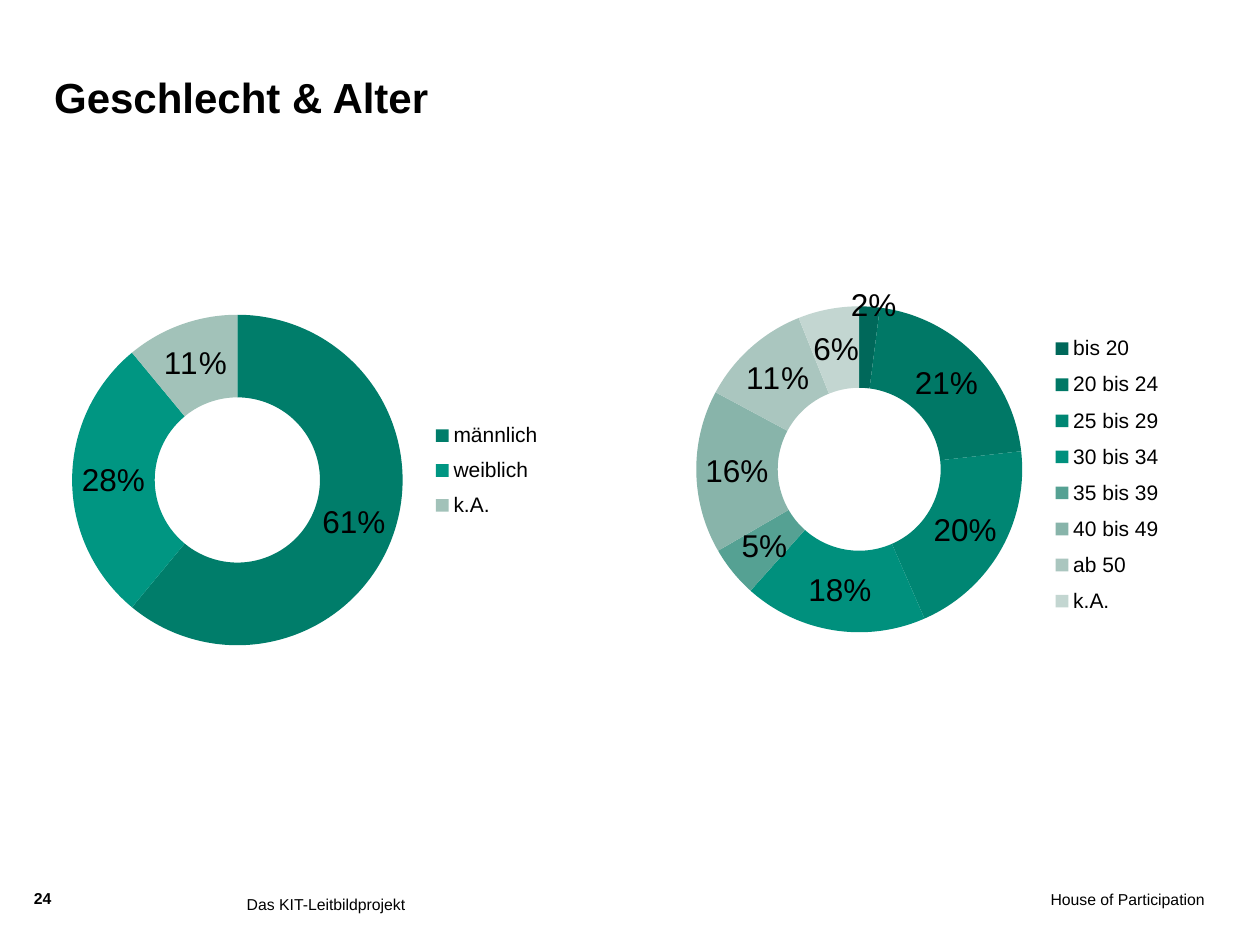
from lxml import etree
from pptx import Presentation
from pptx.chart.data import CategoryChartData
from pptx.dml.color import RGBColor
from pptx.enum.chart import XL_CHART_TYPE, XL_LEGEND_POSITION
from pptx.enum.text import MSO_ANCHOR, PP_ALIGN
from pptx.oxml import parse_xml
from pptx.oxml.ns import nsdecls, qn
from pptx.util import Inches, Pt

DOUGHNUT = XL_CHART_TYPE.DOUGHNUT
LEGEND_RIGHT = XL_LEGEND_POSITION.RIGHT
TOP, BOTTOM = MSO_ANCHOR.TOP, MSO_ANCHOR.BOTTOM
LEFT, RIGHT = PP_ALIGN.LEFT, PP_ALIGN.RIGHT

THEME = {
    "font": "Arial",
    "text": RGBColor.from_string("000000"),
    "title": Pt(24),
    "label": Pt(18),
    "legend": Pt(12),
    "footer": Pt(9),
    "gender": ["007D6A", "009682", "A2C2B9"],
    "age": ["00685A", "007866", "008673", "00907D",
            "55A193", "88B4AA", "AAC6BF", "C3D6D1"],
}

deck = Presentation()
deck.slide_width, deck.slide_height = Inches(10), Inches(7.5)
page = deck.slides.add_slide(deck.slide_layouts[6])
column, row = deck.slide_width / 100, deck.slide_height / 100


def style(font, size, bold=False):
    for name, value in {"name": THEME["font"], "size": size, "bold": bold}.items():
        setattr(font, name, value)
    font.color.rgb = THEME["text"]


def add_layout(parent, index, values, inner=False):
    """Insert a manual chart layout; values are shares of the chart's size."""
    layout = parse_xml(f"<c:layout {nsdecls('c')}><c:manualLayout/></c:layout>")
    settings = {"layoutTarget": "inner"} if inner else {}
    if len(values) == 4:
        settings.update(xMode="edge", yMode="edge")
    settings.update(zip("xywh", values))
    for name, value in settings.items():
        etree.SubElement(layout[0], qn(f"c:{name}")).set("val", str(value))
    for old in parent.findall(qn("c:layout")):
        parent.remove(old)
    parent.insert(index, layout)


# Places are left, top, width, height in columns and rows.
texts = [
    ("Geschlecht & Alter", (4.3, 4.8, 75.6, 8.13), "title", True, LEFT, BOTTOM, (0, 0)),
    ("24", (2.7, 94, 3.6, 3.2), "footer", True, LEFT, TOP, (0, 0)),
    ("Das KIT-Leitbildprojekt", (18.6, 94, 46.5, 5.2), "footer", False, LEFT, TOP, (0.1, 0.05)),
    ("House of Participation", (65.7, 94.13, 29.9, 5.2), "footer", False, RIGHT, TOP, (0, 0)),
]
for words, (x, y, w, h), size, bold, align, anchor, (side, edge) in texts:
    box = page.shapes.add_textbox(int(x * column), int(y * row), int(w * column), int(h * row))
    frame = box.text_frame
    frame_format = {
        "word_wrap": True, "vertical_anchor": anchor,
        "margin_left": Inches(side), "margin_right": Inches(side),
        "margin_top": Inches(edge), "margin_bottom": Inches(edge),
    }
    for name, value in frame_format.items():
        setattr(frame, name, value)
    para = frame.paragraphs[0]
    para.alignment = align
    span = para.add_run()
    span.text = words
    style(span.font, THEME[size], bold)

# Ring and legend areas are shares of each chart's own frame.
charts = [
    {"place": (0, 30, 47.7, 40), "colours": "gender",
     "ring": (0.12, 0.08, 0.55, 0.88), "legend": (0.71, 0.34, 0.2, 0.31),
     "data": {"männlich": 61, "weiblich": 28, "k.A.": 11}, "moved": {}},
    {"place": (46.1, 30.27, 53.9, 40), "colours": "age",
     "ring": (0.17, 0.05, 0.48, 0.87), "legend": (0.68, 0.1, 0.19, 0.8),
     "data": {"bis 20": 2, "20 bis 24": 21, "25 bis 29": 20, "30 bis 34": 18,
              "35 bis 39": 5, "40 bis 49": 16, "ab 50": 11, "k.A.": 6},
     "moved": {0: (0.01, -0.11)}},
]
for item in charts:
    data = CategoryChartData()
    data.categories = list(item["data"])
    data.add_series("Series 1", list(item["data"].values()))
    x, y, w, h = item["place"]
    chart = page.shapes.add_chart(
        DOUGHNUT, int(x * column), int(y * row), int(w * column), int(h * row), data).chart
    chart.has_title = False
    style(chart.font, THEME["label"])

    chart.has_legend = True
    legend = chart.legend
    legend.position = LEGEND_RIGHT
    legend.include_in_layout = False
    style(legend.font, THEME["legend"])
    chart_part = chart.element.find(qn("c:chart"))
    add_layout(chart_part.find(qn("c:plotArea")), 0, item["ring"], inner=True)
    add_layout(chart_part.find(qn("c:legend")), 1, item["legend"])

    plot = chart.plots[0]
    plot.vary_by_categories = True
    series = plot.series[0]
    for index, colour in enumerate(THEME[item["colours"]]):
        point = series.points[index].format
        point.fill.solid()
        point.fill.fore_color.rgb = RGBColor.from_string(colour)
        point.line.fill.background()

    labels = series.data_labels
    label_format = {"show_percentage": True, "show_value": False,
                    "number_format": "0%", "number_format_is_linked": False}
    for name, value in label_format.items():
        setattr(labels, name, value)
    style(labels.font, THEME["label"])
    for index, offset in item["moved"].items():
        style(series.points[index].data_label.font, THEME["label"])
        label = chart.element.xpath(f".//c:dLbl[c:idx/@val='{index}']")[0]
        label.find(qn("c:showVal")).set("val", "0")
        label.find(qn("c:showPercent")).set("val", "1")
        add_layout(label, 1, offset)

deck.save("out.pptx")
